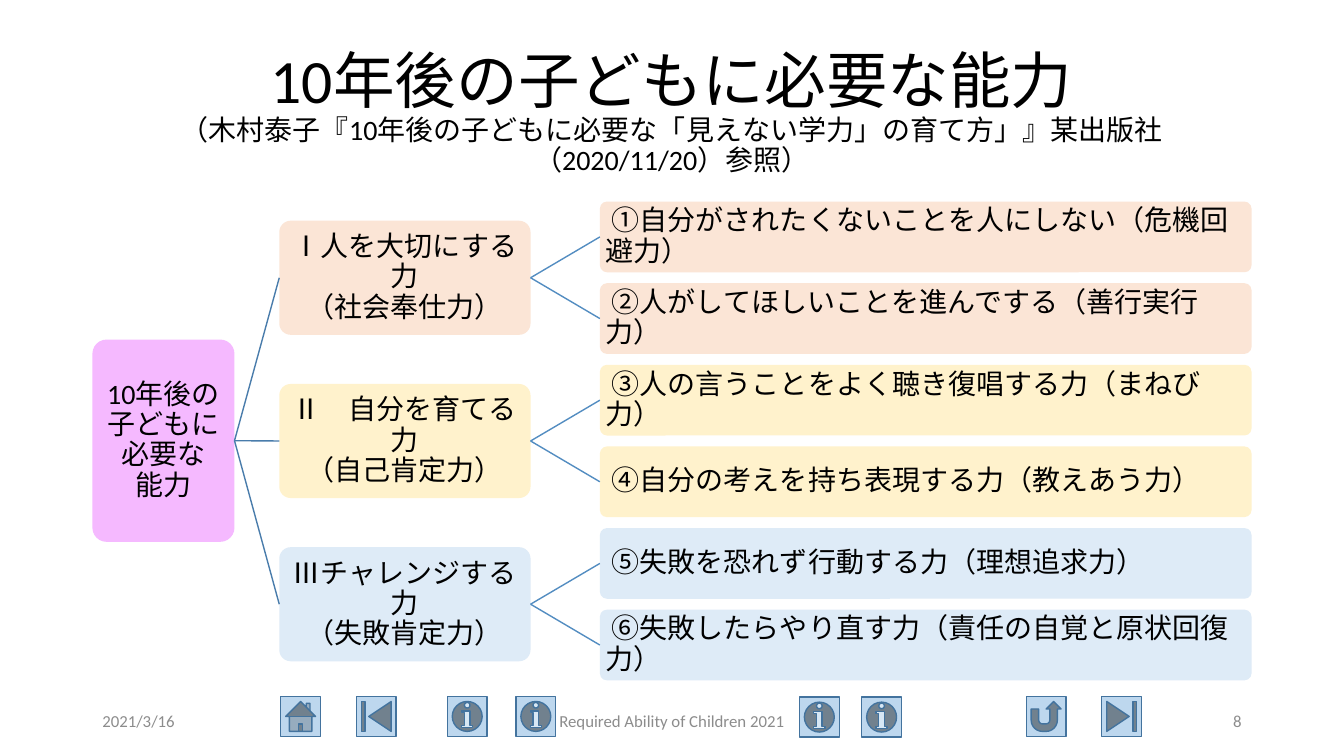
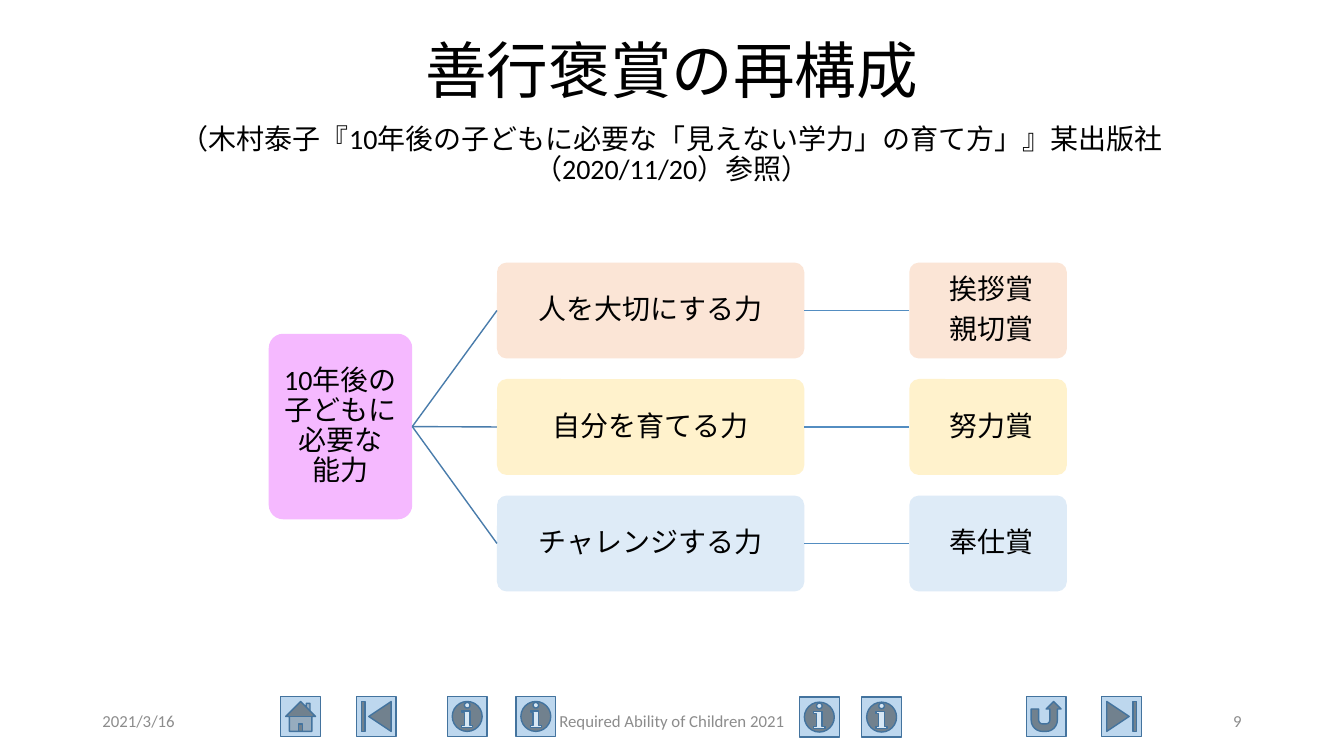
from lxml import etree
from pptx import Presentation
from pptx.dml.color import RGBColor
from pptx.enum.shapes import MSO_CONNECTOR, MSO_SHAPE
from pptx.enum.text import MSO_ANCHOR, PP_ALIGN
from pptx.oxml.ns import qn
from pptx.util import Pt

LEFT, CENTER, RIGHT = PP_ALIGN.LEFT, PP_ALIGN.CENTER, PP_ALIGN.RIGHT
MIDDLE = MSO_ANCHOR.MIDDLE
ROUNDED = MSO_SHAPE.ROUNDED_RECTANGLE
STRAIGHT = MSO_CONNECTOR.STRAIGHT
HOME = MSO_SHAPE.ACTION_BUTTON_HOME
BEGINNING = MSO_SHAPE.ACTION_BUTTON_BEGINNING
INFORMATION = MSO_SHAPE.ACTION_BUTTON_INFORMATION
RETURN = MSO_SHAPE.ACTION_BUTTON_RETURN
END = MSO_SHAPE.ACTION_BUTTON_END
LEFT_SITE, RIGHT_SITE = 1, 3

COLORS = {
    "text": "000000",
    "footer": "8C8C8C",
    "button": "BDD7EE",
    "button_line": "43739E",
    "root": "F5B9FF",
    "care": "FBE5D6",
    "growth": "FFF2CC",
    "challenge": "DEEBF7",
    "root_link": "497CAB",
    "branch_link": "538DC1",
}
FONT = "Calibri"
BUTTONS = [
    (HOME, 200.5, 497.5), (BEGINNING, 254.5, 497.5),
    (INFORMATION, 319.5, 497.5), (INFORMATION, 368.5, 497.5),
    (INFORMATION, 571, 498), (INFORMATION, 615.5, 498),
    (RETURN, 733, 497.5), (END, 787, 497.5),
]
SOURCE = "（木村泰子『10年後の子どもに必要な「見えない学力」の育て方」』某出版社（2020/11/20）参照）"
ROOT = "10年後の\n子どもに\n必要な\n能力"
THEMES = ["care", "growth", "challenge"]


class Slides:
    def __init__(self):
        self.deck = Presentation()
        self.deck.slide_width, self.deck.slide_height = Pt(960), Pt(540)
        self.page = None

    def color(self, name):
        return RGBColor.from_string(COLORS[name])

    def new_page(self, title, number, source_gap=0):
        self.page = self.deck.slides.add_slide(self.deck.slide_layouts[6])
        for kind, left, top in BUTTONS:
            self.button(kind, left, top)
        self.title(title, source_gap)
        self.footer("2021/3/16", 66, 216, LEFT)
        self.footer("Required Ability of Children 2021", 318, 324, CENTER)
        self.footer(number, 678, 216, RIGHT)

    def frame(self, box, inset_x=7.2, inset_y=3.6):
        frame = box.text_frame
        frame.word_wrap = True
        frame.vertical_anchor = MIDDLE
        frame.margin_left = frame.margin_right = Pt(inset_x)
        frame.margin_top = frame.margin_bottom = Pt(inset_y)
        return frame

    def add_text(self, para, text, size, align, color="text", spacing=0.9):
        para.alignment = align
        para.line_spacing = spacing
        for index, line in enumerate(text.split("\n")):
            if index:
                para.add_line_break()
            span = para.add_run()
            span.text = line
            span.font.name = FONT
            span.font.size = Pt(size)
            span.font.color.rgb = self.color(color)

    def title(self, text, source_gap):
        box = self.page.shapes.add_textbox(Pt(66), Pt(28.75), Pt(828), Pt(104.4))
        frame = self.frame(box)
        self.add_text(frame.paragraphs[0], text, 44, CENTER)
        para = frame.add_paragraph()
        para.space_before = Pt(source_gap)
        self.add_text(para, SOURCE, 20, CENTER)

    def footer(self, text, left, width, align):
        box = self.page.shapes.add_textbox(Pt(left), Pt(500.5), Pt(width), Pt(28.75))
        self.add_text(self.frame(box).paragraphs[0], text, 12, align, "footer", 1.0)

    def button(self, kind, left, top):
        box = self.page.shapes.add_shape(kind, Pt(left), Pt(top), Pt(28.5), Pt(28.5))
        box.shadow.inherit = False
        box.fill.solid()
        box.fill.fore_color.rgb = self.color("button")
        box.line.color.rgb = self.color("button_line")
        box.line.width = Pt(1)

    def card(self, paragraphs, left, middle, width, height, fill, align=CENTER):
        box = self.page.shapes.add_shape(
            ROUNDED, Pt(left), Pt(middle - height / 2), Pt(width), Pt(height))
        box.adjustments[0] = 0.1
        box.shadow.inherit = False
        box.fill.solid()
        box.fill.fore_color.rgb = self.color(fill)
        box.line.fill.background()
        frame = self.frame(box, 2.5, 2.5)
        for index, text in enumerate(paragraphs):
            para = frame.add_paragraph() if index else frame.paragraphs[0]
            para.space_after = Pt(7)
            self.add_text(para, text, 20, align)
        return box

    def link(self, start, end, color):
        line = self.page.shapes.add_connector(STRAIGHT, 0, 0, 0, 0)
        line.begin_connect(start, RIGHT_SITE)
        line.end_connect(end, LEFT_SITE)
        line.line.color.rgb = self.color(color)
        line.line.width = Pt(1)
        etree.SubElement(line._element.spPr, qn("a:effectLst"))


def abilities_page(slides):
    slides.new_page("10年後の子どもに必要な能力", "8")
    groups = [
        ("Ⅰ人を大切にする力\n（社会奉仕力）",
         [" ①自分がされたくないことを人にしない（危機回避力）",
          " ②人がしてほしいことを進んでする（善行実行力）"]),
        ("Ⅱ　自分を育てる力\n（自己肯定力）",
         [" ③人の言うことをよく聴き復唱する力（まねび力）",
          " ④自分の考えを持ち表現する力（教えあう力）"]),
        ("Ⅲチャレンジする力\n（失敗肯定力）",
         [" ⑤失敗を恐れず行動する力（理想追求力）",
          " ⑥失敗したらやり直す力（責任の自覚と原状回復力）"]),
    ]
    pitch = 58.3
    root = slides.card([ROOT], 66, 314.8, 101.5, 144.5, "root")
    for index, (theme, (ability, skills)) in enumerate(zip(THEMES, groups)):
        middle = 315 + (index - 1) * 2 * pitch
        head = slides.card([ability], 199.5, middle, 179.5, 81.5, theme)
        slides.link(root, head, "root_link")
        for row, skill in enumerate(skills):
            center = middle + (row - 0.5) * pitch
            leaf = slides.card([skill], 428.5, center, 465.5, 50.5, theme, LEFT)
            slides.link(head, leaf, "branch_link")


def awards_page(slides):
    slides.new_page("善行褒賞の再構成", "9", 13)
    groups = [
        ("人を大切にする力", [" 挨拶賞", " 親切賞"]),
        ("自分を育てる力", [" 努力賞"]),
        ("チャレンジする力", [" 奉仕賞"]),
    ]
    root = slides.card([ROOT], 192, 304.7, 102.5, 132.5, "root")
    for index, (theme, (ability, awards)) in enumerate(zip(THEMES, groups)):
        middle = 305 + (index - 1) * 83.2
        head = slides.card([ability], 355, middle, 219.5, 68.5, theme)
        award = slides.card(awards, 649.5, middle, 112.5, 68.5, theme)
        slides.link(root, head, "root_link")
        slides.link(head, award, "branch_link")


def main():
    slides = Slides()
    abilities_page(slides)
    awards_page(slides)
    slides.deck.save("out.pptx")


if __name__ == "__main__":
    main()
